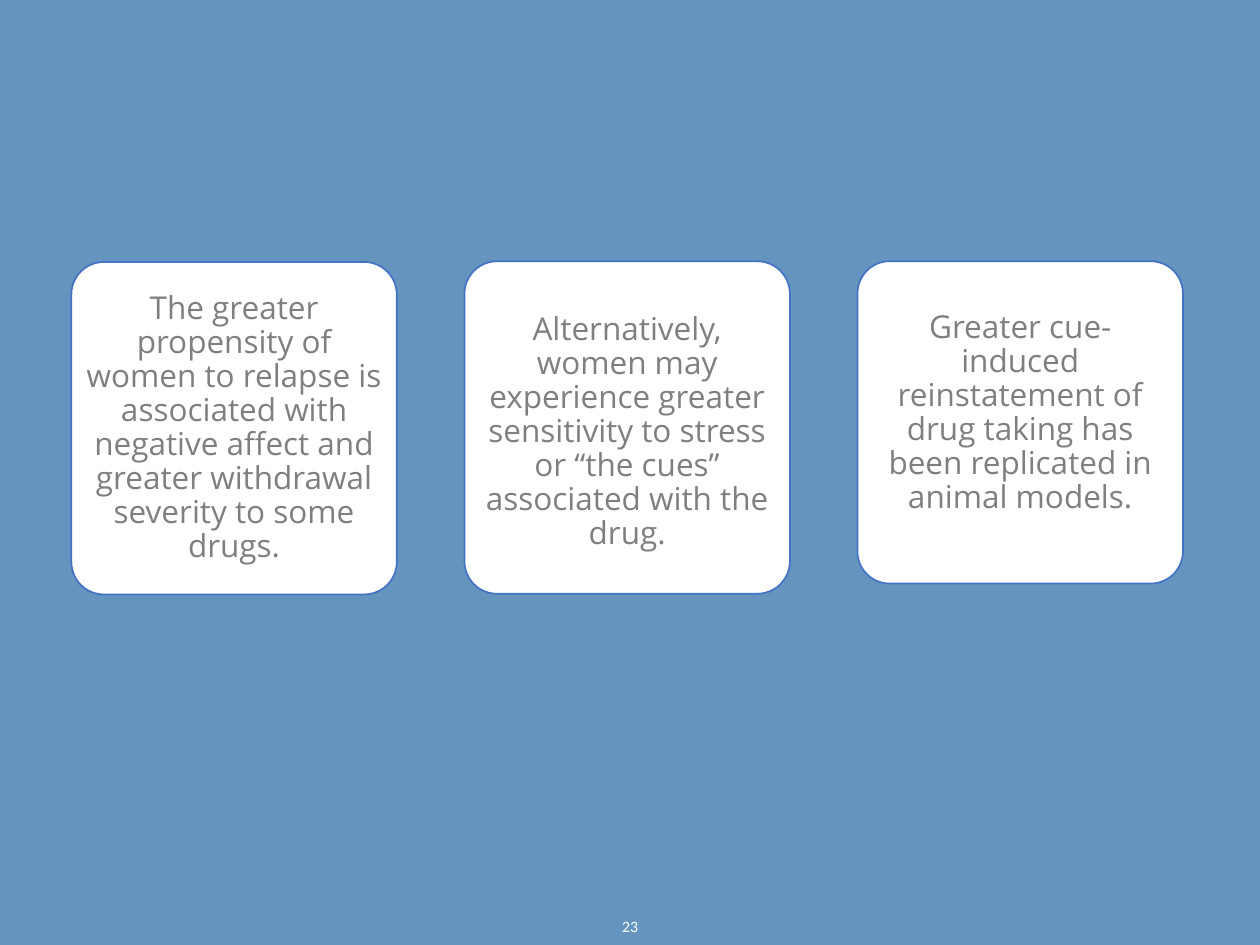
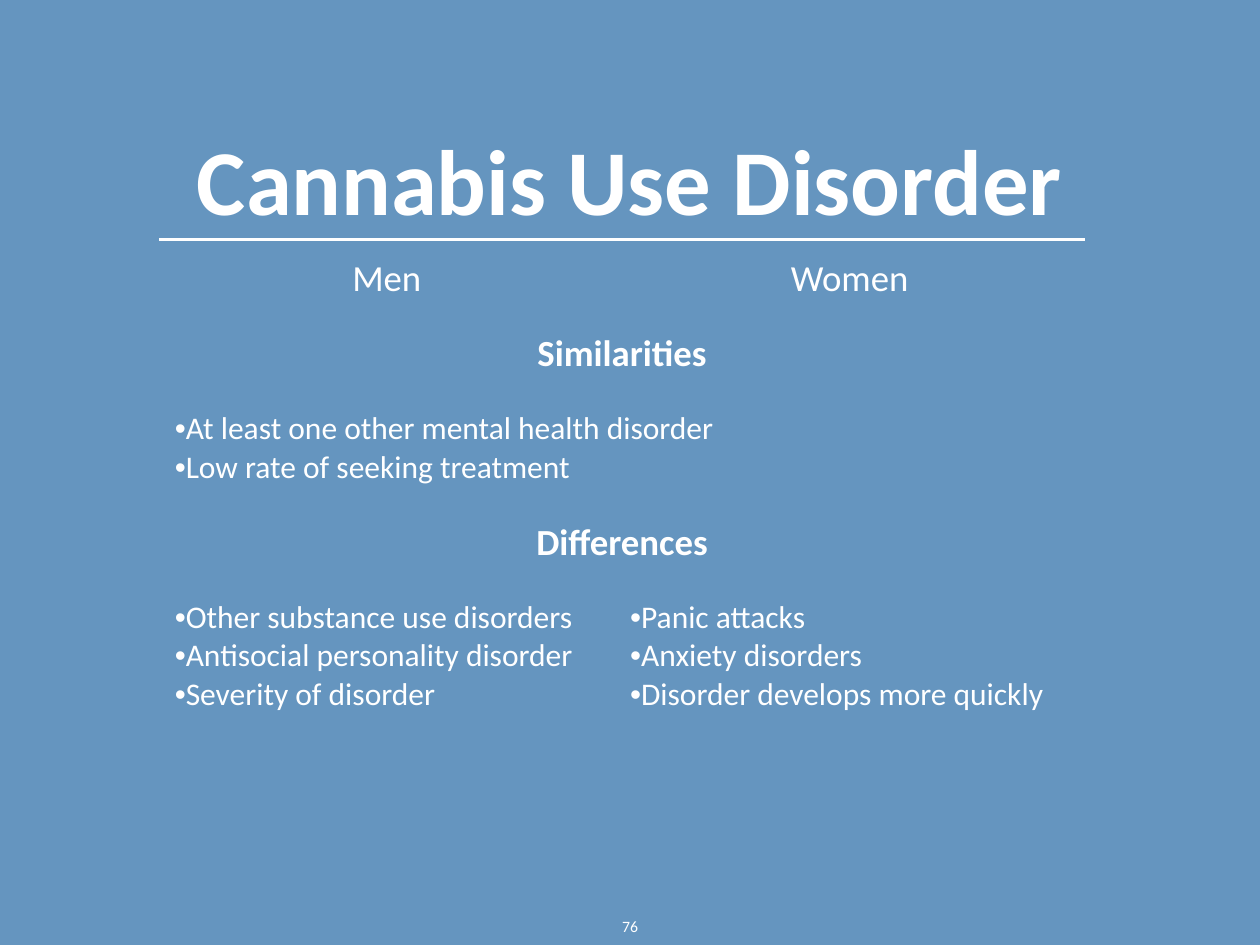
from dataclasses import dataclass

from lxml.etree import SubElement
from pptx import Presentation
from pptx.dml.color import RGBColor as Rgb
from pptx.enum.shapes import MSO_SHAPE as Shape
from pptx.enum.text import MSO_ANCHOR as Anchor, PP_ALIGN as Align
from pptx.oxml import parse_xml
from pptx.oxml.ns import nsdecls, qn
from pptx.util import Pt


@dataclass(frozen=True)
class Theme:
    background: Rgb = Rgb(0x65, 0x95, 0xBF)
    white: Rgb = Rgb(0xFF, 0xFF, 0xFF)
    card_line: Rgb = Rgb(0x44, 0x72, 0xC4)
    card_text: Rgb = Rgb(0x7F, 0x7F, 0x7F)
    font: str = "Calibri"
    card_font: str = "Open Sans"
    bullet_font: str = "Arial"
    number_size: int = 9
    body_size: int = 18
    heading_size: int = 21
    title_size: int = 53


theme = Theme()


def write_lines(frame, lines, size, color=theme.white, font=theme.font,
                bold=False, align=Align.CENTER, spacing=None, bullet=None):
    """Fill a text frame with one paragraph per line."""
    font_values = {"name": font, "size": Pt(size), "bold": bold}
    for index, line in enumerate(lines):
        paragraph = frame.paragraphs[0] if index == 0 else frame.add_paragraph()
        paragraph.alignment = align
        paragraph.line_spacing = spacing
        if bullet:
            properties = paragraph._p.get_or_add_pPr()
            SubElement(properties, qn("a:buFont")).set("typeface", theme.bullet_font)
            SubElement(properties, qn("a:buChar")).set("char", bullet)
        run = paragraph.add_run()
        run.text = line
        for name, value in font_values.items():
            setattr(run.font, name, value)
        run.font.color.rgb = color


def add_text(slide, left, top, width, height, text, margin=None, **style):
    """Add a wrapped, vertically centred text box."""
    box = slide.shapes.add_textbox(Pt(left), Pt(top), Pt(width), Pt(height))
    frame = box.text_frame
    frame.word_wrap = True
    frame.vertical_anchor = Anchor.MIDDLE
    if margin is not None:
        for side in ("left", "top", "right", "bottom"):
            setattr(frame, f"margin_{side}", Pt(margin))
    write_lines(frame, [text], **style)


presentation = Presentation()
presentation.slide_width, presentation.slide_height = Pt(720), Pt(540)

# Shared background and slide number
slides = []
for number in ("23", "76"):
    slide = presentation.slides.add_slide(presentation.slide_layouts[6])
    slide.background.fill.solid()
    slide.background.fill.fore_color.rgb = theme.background
    add_text(slide, 279, 515, 162, 29, number, size=theme.number_size)
    slides.append(slide)
cards_slide, disorder_slide = slides

# Three cards: top, height, text top, text height, text margin, text
cards = [
    (149.7, 190, 155.5, 178.6, 4.5,
     "The greater propensity of women to relapse is associated with "
     "negative affect and greater withdrawal severity to some drugs."),
    (149.3, 190, 157.7, 178.6, 6.75,
     "Alternatively, women may experience greater sensitivity to stress "
     "or “the cues” associated with the drug."),
    (149.3, 184.2, 149.3, 173.5, 13,
     "Greater cue-induced reinstatement of drug taking has been "
     "replicated in animal models."),
]
card_left, card_step, card_width, text_inset = 40.8, 224.6, 186, 3.2
for index, (top, height, text_top, text_height, margin, text) in enumerate(cards):
    left = card_left + index * card_step
    card = cards_slide.shapes.add_shape(
        Shape.ROUNDED_RECTANGLE, Pt(left), Pt(top), Pt(card_width), Pt(height))
    card.shadow.inherit = False
    card.adjustments[0] = 0.1
    card.fill.solid()
    card.fill.fore_color.rgb = theme.white
    card.line.color.rgb = theme.card_line
    card.line.width = Pt(1)
    add_text(cards_slide, left + text_inset, text_top,
             card_width - 2 * text_inset, text_height, text, margin,
             size=theme.body_size, color=theme.card_text,
             font=theme.card_font, spacing=0.9)

# Title
add_text(disorder_slide, 37.8, 56.6, 644.4, 98.5, "Cannabis Use Disorder",
         size=theme.title_size, bold=True, spacing=0.9)

# Comparison table without style lines
column_widths = (260.2, 268.9)
row_heights = (44.7, 44.7, 63, 44.7, 85)
table = disorder_slide.shapes.add_table(
    len(row_heights), len(column_widths), Pt(90.9), Pt(136.8),
    Pt(sum(column_widths)), Pt(sum(row_heights))).table
table.first_row = table.horz_banding = False
table._tbl.tblPr.find(qn("a:tableStyleId")).text = (
    "{2D5ABB26-0587-4C30-8999-92F81FD0307C}")
for column, width in zip(table.columns, column_widths):
    column.width = Pt(width)
for row, height in zip(table.rows, row_heights):
    row.height = Pt(height)

# A row with one entry spans both columns
head = {"size": theme.heading_size}
section = {"size": theme.heading_size, "bold": True}
points = {"size": theme.body_size, "align": Align.LEFT, "bullet": "•"}
table_rows = [
    (head, [["Men"], ["Women"]]),
    (section, [["Similarities"]]),
    (points, [["At least one other mental health disorder",
               "Low rate of seeking treatment"]]),
    (section, [["Differences"]]),
    (points, [["Other substance use disorders",
               "Antisocial personality disorder",
               "Severity of disorder"],
              ["Panic attacks", "Anxiety disorders",
               "Disorder develops more quickly"]]),
]
for row_index, (style, entries) in enumerate(table_rows):
    if len(entries) == 1:
        table.cell(row_index, 0).merge(table.cell(row_index, 1))
    side_margin = 9 if style is points else 4.5
    cell_values = {
        "margin_left": Pt(side_margin), "margin_right": Pt(side_margin),
        "margin_top": Pt(8), "margin_bottom": Pt(8),
        "vertical_anchor": Anchor.MIDDLE if style is head else Anchor.TOP,
    }
    for column_index, lines in enumerate(entries):
        cell = table.cell(row_index, column_index)
        for name, value in cell_values.items():
            setattr(cell, name, value)
        if style is points:
            cell.fill.solid()
            cell.fill.fore_color.rgb = theme.background
        else:
            cell.fill.background()
        write_lines(cell.text_frame, lines, **style)
        # White rule above the column heads
        if style is head:
            cell._tc.get_or_add_tcPr().insert(0, parse_xml(
                f'<a:lnT {nsdecls("a")} w="{Pt(2.25)}"><a:solidFill>'
                f'<a:srgbClr val="{theme.white}"/></a:solidFill></a:lnT>'))

presentation.save("out.pptx")
